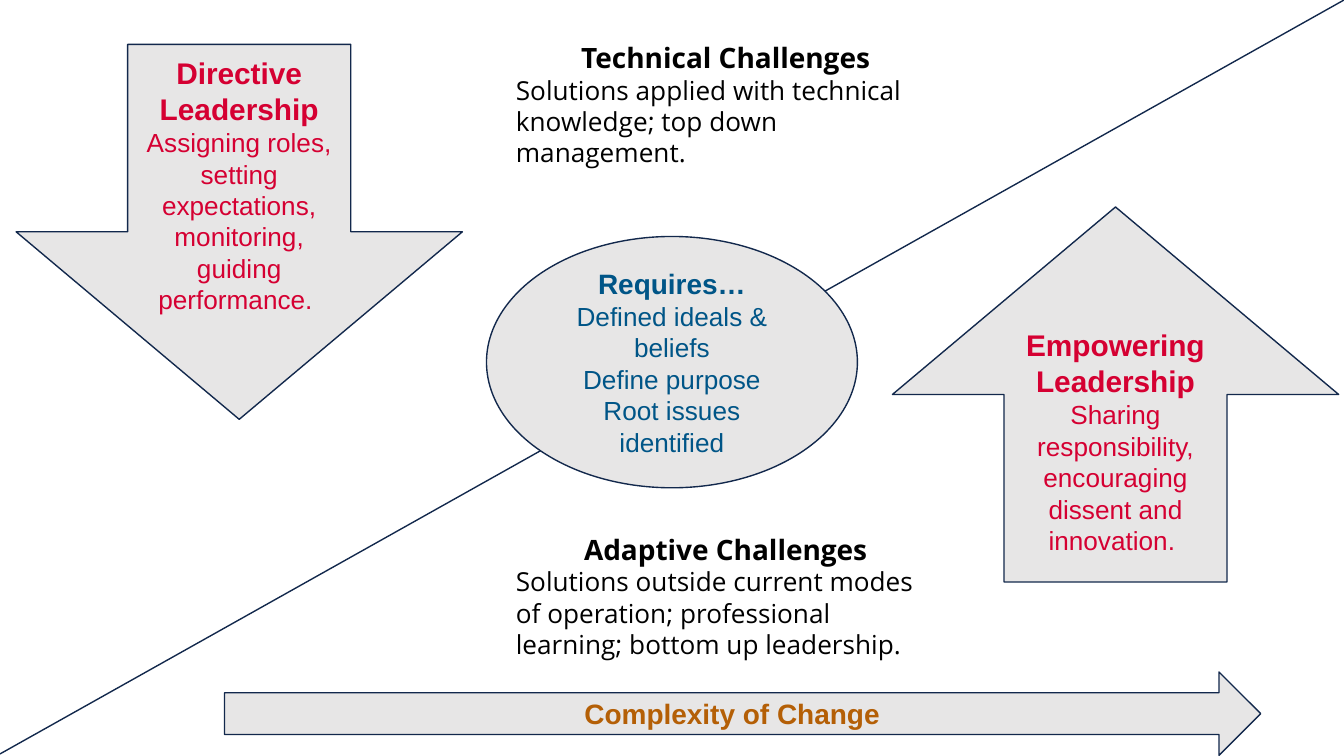
from lxml import etree
from pptx import Presentation
from pptx.dml.color import RGBColor
from pptx.enum.shapes import MSO_CONNECTOR, MSO_SHAPE
from pptx.enum.text import MSO_ANCHOR, PP_ALIGN
from pptx.oxml.ns import qn
from pptx.util import Inches, Pt

CENTER, LEFT = PP_ALIGN.CENTER, PP_ALIGN.LEFT
TOP, MIDDLE = MSO_ANCHOR.TOP, MSO_ANCHOR.MIDDLE
DOWN, UP, RIGHT = MSO_SHAPE.DOWN_ARROW, MSO_SHAPE.UP_ARROW, MSO_SHAPE.RIGHT_ARROW
OVAL = MSO_SHAPE.OVAL
STRAIGHT = MSO_CONNECTOR.STRAIGHT

GREY, NAVY, RED = "E7E6E6", "12284C", "D50032"
BLUE, ORANGE, BLACK = "005587", "B45F06", "000000"
WIDTH = 10
HEIGHT = WIDTH * 9 / 16
BODY_SIZE = 14


def color(value):
    return RGBColor.from_string(value)


def write_text(shape, heading, body, size, font, ink, anchor, body_align):
    frame = shape.text_frame
    frame.word_wrap = True
    frame.vertical_anchor = anchor
    frame.margin_left = frame.margin_right = Inches(0.1)
    frame.margin_top = frame.margin_bottom = Inches(0.1)
    for index, text in enumerate([heading, *body]):
        para = frame.paragraphs[0] if index == 0 else frame.add_paragraph()
        para.alignment = body_align if index else CENTER
        span = para.add_run()
        span.text = text
        span.font.name = font
        span.font.size = Pt(BODY_SIZE if index else size)
        span.font.bold = index == 0
        span.font.color.rgb = color(ink)


def add_panel(page, kind, box, heading, body, size, ink):
    panel = page.shapes.add_shape(kind, *map(Inches, box))
    panel.shadow.inherit = False
    panel.fill.solid()
    panel.fill.fore_color.rgb = color(GREY)
    panel.line.color.rgb = color(NAVY)
    panel.line.width = Pt(0.75)
    write_text(panel, heading, body, size, "Arial", ink, MIDDLE, CENTER)


def add_challenge(page, box, heading, body):
    challenge = page.shapes.add_textbox(*map(Inches, box))
    write_text(challenge, heading, body, 15, "Open Sans", BLACK, TOP, LEFT)


def add_diagonal(page, box):
    left, top, width, height = box
    diagonal = page.shapes.add_connector(
        STRAIGHT, Inches(left), Inches(top + height), Inches(left + width), Inches(top))
    diagonal.line.color.rgb = color(NAVY)
    diagonal.line.width = Pt(0.75)
    etree.SubElement(diagonal._element.spPr, qn("a:effectLst"))


def build_leadership_page(page):
    add_panel(page, DOWN, (0.12, 0.33, 3.32, 2.79), "Directive Leadership",
              ["Assigning roles, setting expectations, monitoring, guiding performance. "],
              16, RED)
    add_panel(page, UP, (6.64, 1.54, 3.32, 2.79), "Empowering Leadership",
              ["Sharing responsibility, encouraging dissent and innovation. "], 16, RED)
    add_diagonal(page, (0, 0, WIDTH, 5.61))
    add_panel(page, RIGHT, (1.67, 5, 7.71, 0.62), "Complexity of Change", [], 15, ORANGE)
    add_panel(page, OVAL, (3.62, 1.76, 2.76, 1.87), "Requires…",
              ["Defined ideals & beliefs", "Define purpose", "Root issues identified"],
              15, BLUE)
    add_challenge(page, (3.74, 0.2, 3.32, 1.16), "Technical Challenges",
                  ["Solutions applied with technical knowledge; top down management."])
    add_challenge(page, (3.74, 3.86, 3.32, 1.16), "Adaptive Challenges",
                  ["Solutions outside current modes of operation; professional learning; "
                   "bottom up leadership."])


def main():
    deck = Presentation()
    deck.slide_width, deck.slide_height = Inches(WIDTH), Inches(HEIGHT)
    build_leadership_page(deck.slides.add_slide(deck.slide_layouts[6]))
    deck.save("out.pptx")


if __name__ == "__main__":
    main()
